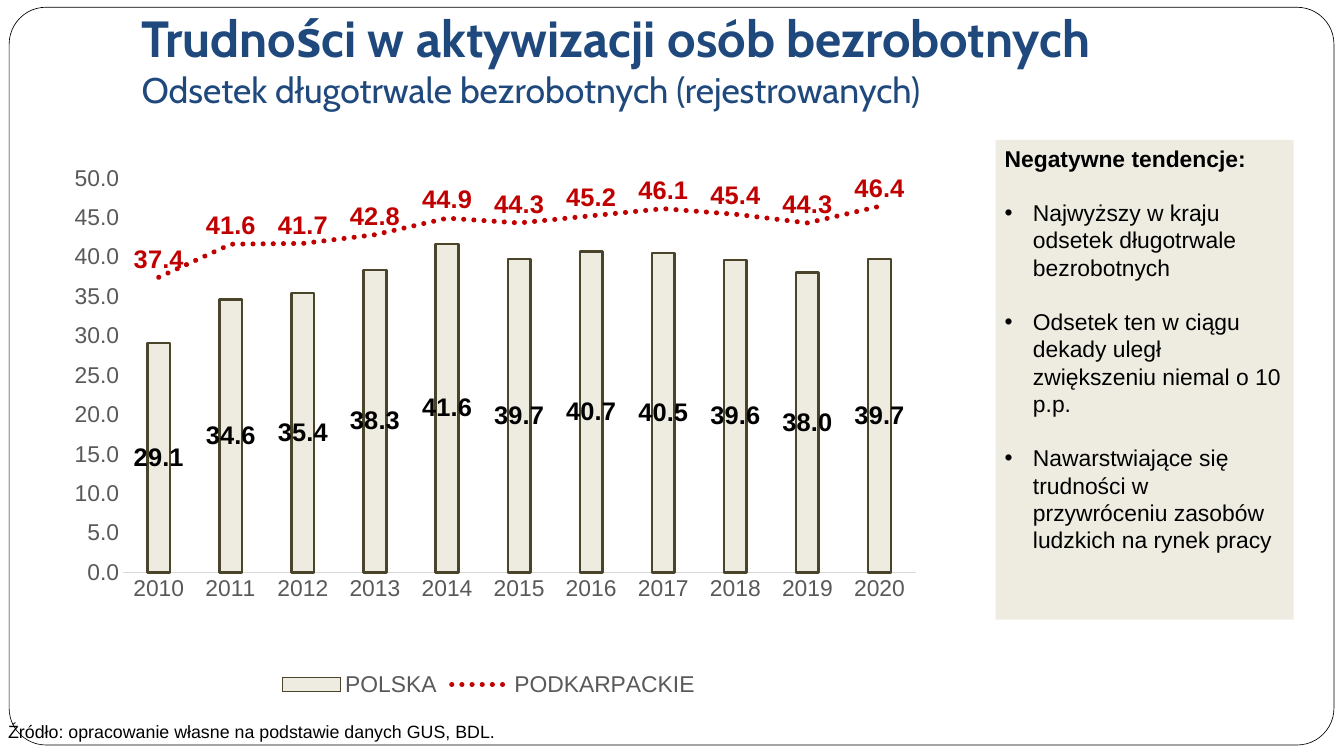
from dataclasses import dataclass

import pptx
import pptx.chart.data
import pptx.dml.color
import pptx.enum.chart
import pptx.enum.dml
import pptx.enum.shapes
import pptx.enum.text
import pptx.oxml.ns
import pptx.util
from lxml import etree

Inches = pptx.util.Inches
Pt = pptx.util.Pt
qn = pptx.oxml.ns.qn
Anchor = pptx.enum.text.MSO_ANCHOR
Position = pptx.enum.chart.XL_LABEL_POSITION


@dataclass(frozen=True)
class Theme:
    heading: str = "Cabin"
    body: str = "Arial"
    white: str = "FFFFFF"
    black: str = "000000"
    navy: str = "1F497D"
    beige: str = "EEECE1"
    olive: str = "4A452A"
    red: str = "C00000"
    grey: str = "595959"
    pale: str = "D9D9D9"
    title: int = 40
    subtitle: int = 28
    label: int = 20
    text: int = 18
    source: int = 14


def color(code):
    return pptx.dml.color.RGBColor.from_string(code)


def apply(target, values):
    for name, value in values.items():
        setattr(target, name, value)


def add_xml(parent, tag, **attributes):
    return etree.SubElement(parent, qn(tag), attributes)


class SlideBuilder:
    def __init__(self, deck, theme):
        self.theme = theme
        self.page = deck.slides.add_slide(deck.slide_layouts[6])

    def font(self, font, size, code, bold=False, name=None):
        apply(font, {"name": name or self.theme.body, "size": Pt(size), "bold": bold})
        font.color.rgb = color(code)

    def paint(self, item, fill, line=None, width=0):
        item.fill.solid()
        item.fill.fore_color.rgb = color(fill)
        if line:
            item.line.color.rgb = color(line)
            item.line.width = Pt(width)
        else:
            item.line.fill.background()

    def panel(self, kind, place, fill, line=None, width=0):
        shape = self.page.shapes.add_shape(kind, *map(Inches, place))
        shape.shadow.inherit = False
        self.paint(shape, fill, line, width)
        return shape

    def text_box(self, place, **frame_values):
        box = self.page.shapes.add_textbox(*map(Inches, place))
        apply(box.text_frame, {"word_wrap": True, **frame_values})
        return box.text_frame

    def paragraph(self, frame, text, size, code, bold=False, name=None, gap=0, bullet=False):
        para = frame.paragraphs[0] if not frame.text else frame.add_paragraph()
        apply(para, {"alignment": pptx.enum.text.PP_ALIGN.LEFT, "space_before": Pt(gap)})
        span = para.add_run()
        span.text = text
        self.font(span.font, size, code, bold, name)
        if bullet:
            indent = Inches(0.31)
            properties = para._p.get_or_add_pPr()
            properties.set("marL", str(indent))
            properties.set("indent", str(-indent))
            add_xml(properties, "a:buFont", typeface=self.theme.body)
            add_xml(properties, "a:buChar", char="•")

    def combined_chart(self, place, years, bars, trend, layout):
        theme = self.theme
        data = pptx.chart.data.CategoryChartData(number_format="0.0")
        data.categories = years
        for name, values in (bars, trend):
            data.add_series(name, values)
        kind = pptx.enum.chart.XL_CHART_TYPE.COLUMN_CLUSTERED
        chart = self.page.shapes.add_chart(kind, *map(Inches, place), data).chart
        apply(chart, {"has_title": False, "has_legend": True})
        self.font(chart.font, theme.text, theme.black)
        self.move_to_line(chart)
        self.place_plot(chart, layout)

        apply(chart.plots[0], {"gap_width": 219, "overlap": -27})
        for plot in chart.plots:
            plot.vary_by_categories = False
        columns, line = (plot.series[0] for plot in chart.plots)
        self.paint(columns.format, theme.beige, theme.olive, 2)
        line.smooth = False
        line.marker.style = pptx.enum.chart.XL_MARKER_STYLE.NONE
        line.format.line.color.rgb = color(theme.red)
        apply(line.format.line, {
            "width": Pt(4), "dash_style": pptx.enum.dml.MSO_LINE.ROUND_DOT})
        chart.element.xpath(".//c:lineChart/c:ser/c:spPr/a:ln")[0].set("cap", "rnd")
        for series, code, position in ((columns, theme.black, Position.CENTER),
                                       (line, theme.red, Position.ABOVE)):
            labels = series.data_labels
            apply(labels, {"show_value": True, "position": position,
                           "number_format": "0.0", "number_format_is_linked": False})
            self.font(labels.font, theme.label, code, True)

        no_ticks = pptx.enum.chart.XL_TICK_MARK.NONE
        for axis in (chart.category_axis, chart.value_axis):
            apply(axis, {"has_major_gridlines": False, "major_tick_mark": no_ticks,
                         "minor_tick_mark": no_ticks})
            self.font(axis.tick_labels.font, theme.text, theme.grey)
        chart.category_axis.format.line.color.rgb = color(theme.pale)
        chart.category_axis.format.line.width = Pt(0.75)
        apply(chart.value_axis, {"minimum_scale": 0, "maximum_scale": 50, "major_unit": 5})
        chart.value_axis.format.line.fill.background()
        apply(chart.value_axis.tick_labels, {
            "number_format": "0.0", "number_format_is_linked": False})
        apply(chart.legend, {"position": pptx.enum.chart.XL_LEGEND_POSITION.BOTTOM,
                             "include_in_layout": False})
        self.font(chart.legend.font, theme.text, theme.grey)

    def move_to_line(self, chart):
        bar_plot = chart.element.xpath(".//c:barChart")[0]
        series = bar_plot.xpath("c:ser")[1]
        for flag in series.xpath("c:invertIfNegative"):
            series.remove(flag)
        line_plot = bar_plot.makeelement(qn("c:lineChart"))
        bar_plot.addnext(line_plot)
        add_xml(line_plot, "c:grouping", val="standard")
        add_xml(line_plot, "c:varyColors", val="0")
        line_plot.append(series)
        add_xml(line_plot, "c:marker", val="1")
        for axis in bar_plot.xpath("c:axId"):
            add_xml(line_plot, "c:axId", val=str(axis.get("val")))

    def place_plot(self, chart, layout):
        area = chart.element.xpath(".//c:plotArea")[0]
        for old in area.xpath("c:layout"):
            area.remove(old)
        holder = area.makeelement(qn("c:layout"))
        area.insert(0, holder)
        manual = add_xml(holder, "c:manualLayout")
        add_xml(manual, "c:layoutTarget", val="inner")
        for side in "xy":
            add_xml(manual, f"c:{side}Mode", val="edge")
        for side, share in zip("xywh", layout):
            add_xml(manual, f"c:{side}", val=str(share))


def main():
    deck = pptx.Presentation()
    apply(deck, {"slide_width": Inches(14.7), "slide_height": Inches(8.27)})
    theme = Theme()
    slide = SlideBuilder(deck, theme)
    shapes = pptx.enum.shapes.MSO_SHAPE

    border = slide.panel(shapes.ROUNDED_RECTANGLE, (0.1, 0.08, 14.49, 8.07),
                         theme.white, theme.black, 0.5)
    border.adjustments[0] = 0.05

    title = slide.text_box((1.44, 0.43, 12.49, 0.89), vertical_anchor=Anchor.BOTTOM,
                           margin_left=Inches(0.11), margin_right=Inches(0.11),
                           margin_top=Inches(0.06), margin_bottom=Inches(0.11))
    slide.paragraph(title, "Trudności w aktywizacji osób bezrobotnych",
                    theme.title, theme.navy, True, theme.heading)
    slide.paragraph(title, "Odsetek długotrwale bezrobotnych (rejestrowanych)",
                    theme.subtitle, theme.navy, name=theme.heading)

    slide.combined_chart(
        (0.58, 1.77, 9.53, 5.91), [str(year) for year in range(2010, 2021)],
        ("POLSKA", (29.1, 34.6, 35.4, 38.3, 41.6, 39.7, 40.7, 40.5, 39.6, 38, 39.7)),
        ("PODKARPACKIE", (37.4, 41.6, 41.7, 42.8, 44.9, 44.3, 45.2, 46.1, 45.4, 44.3, 46.4)),
        (0.08, 0.03, 0.91, 0.73))

    trends = slide.panel(shapes.RECTANGLE, (10.89, 1.53, 3.26, 5.25), theme.beige).text_frame
    apply(trends, {"word_wrap": True, "vertical_anchor": Anchor.TOP})
    slide.paragraph(trends, "Negatywne tendencje:", theme.text, theme.black, True)
    for point in ("Najwyższy w kraju odsetek długotrwale bezrobotnych",
                  "Odsetek ten w ciągu dekady uległ zwiększeniu niemal o 10 p.p.",
                  "Nawarstwiające się trudności w przywróceniu zasobów ludzkich na rynek pracy"):
        slide.paragraph(trends, point, theme.text, theme.black, gap=21, bullet=True)

    source = slide.text_box((-0.01, 7.84, 6.41, 0.34))
    slide.paragraph(source, "Źródło: opracowanie własne na podstawie danych GUS, BDL.",
                    theme.source, theme.black)
    deck.save("out.pptx")


if __name__ == "__main__":
    main()
